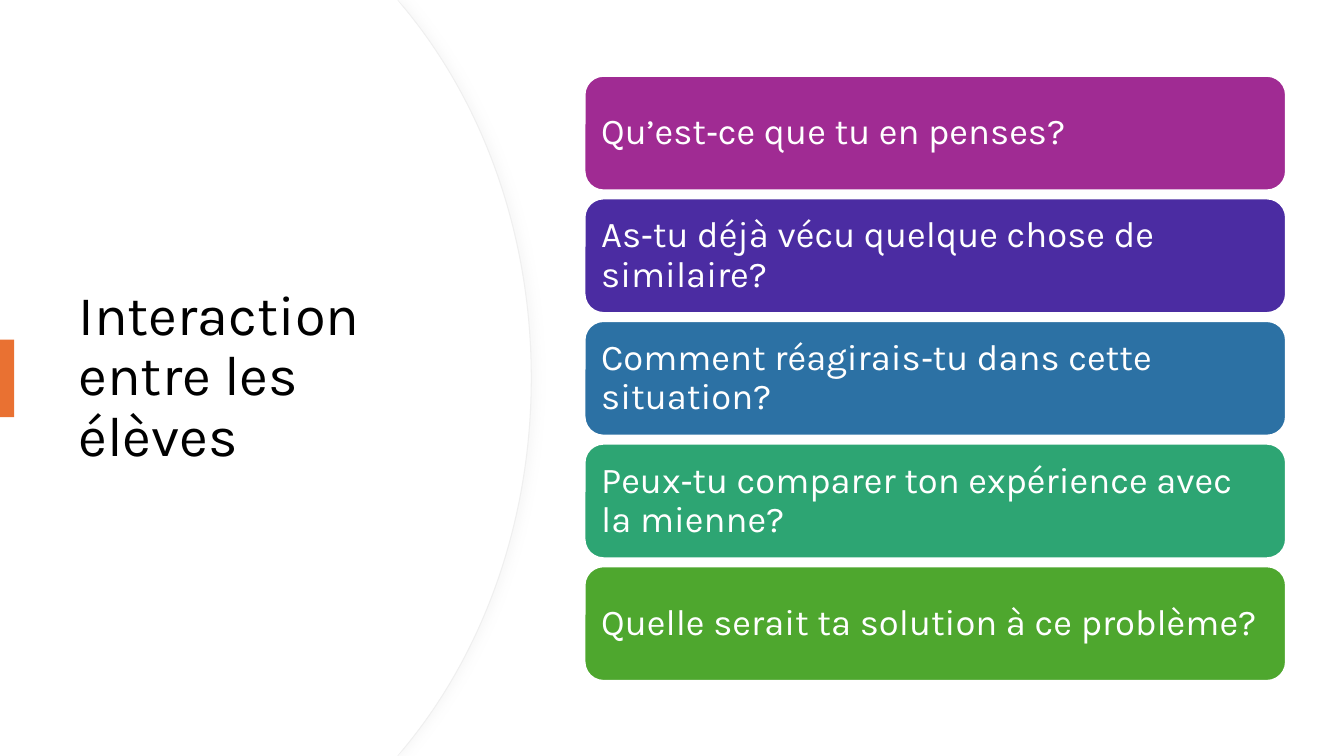
from dataclasses import dataclass

from lxml.etree import SubElement
from pptx import Presentation
from pptx.dml.color import RGBColor
from pptx.enum.shapes import MSO_SHAPE
from pptx.enum.text import MSO_ANCHOR, PP_ALIGN
from pptx.oxml.ns import qn
from pptx.util import Cm, Pt


@dataclass(frozen=True)
class Theme:
    font: str = "Karla"
    title_size: int = 40
    card_size: int = 26
    text: str = "000000"
    paper: str = "FFFFFF"
    outline: str = "EFEFEF"
    shadow: str = "D9D9D9"
    accent: str = "E97132"
    cards: tuple = ("A02B93", "4B2CA2", "2C71A4", "2DA573", "4EA72E")


THEME = Theme()
SLIDE_WIDTH, SLIDE_HEIGHT = 33.87, 19.05
QUESTIONS = (
    "Qu’est‑ce que tu en penses?",
    "As‑tu déjà vécu quelque chose de similaire?",
    "Comment réagirais‑tu dans cette situation?",
    "Peux‑tu comparer ton expérience avec la mienne?",
    "Quelle serait ta solution à ce problème?",
)
CARD_TOP, CARD_HEIGHT, CARD_PITCH = 1.91, 2.89, 3.09


def write_text(shape, text, *, size, color, inset_x=0.25, inset_y=0.13):
    frame = shape.text_frame
    frame.word_wrap = True
    frame.vertical_anchor = MSO_ANCHOR.MIDDLE
    frame.margin_left = frame.margin_right = Cm(inset_x)
    frame.margin_top = frame.margin_bottom = Cm(inset_y)
    paragraph = frame.paragraphs[0]
    paragraph.alignment = PP_ALIGN.LEFT
    paragraph.line_spacing = 0.9
    run = paragraph.add_run()
    run.text = text
    run.font.name = THEME.font
    run.font.size = Pt(size)
    run.font.color.rgb = RGBColor.from_string(color)


def paint(shape, fill, line=None, line_width=0.75):
    shape.shadow.inherit = False
    shape.fill.solid()
    shape.fill.fore_color.rgb = RGBColor.from_string(fill)
    if line is None:
        shape.line.fill.background()
    else:
        shape.line.color.rgb = RGBColor.from_string(line)
        shape.line.width = Pt(line_width)


def add_soft_shadow(shape, color):
    effects = shape._element.spPr.find(qn("a:effectLst"))
    shadow = SubElement(effects, qn("a:outerShdw"), blurRad=str(Pt(7)),
                        dist=str(Pt(3)), dir="0", algn="l", rotWithShape="0")
    tint = SubElement(shadow, qn("a:srgbClr"), val=color)
    SubElement(tint, qn("a:alpha"), val="20000")


def bend(shape, first_segment):
    """Turn three straight segments, from first_segment on, into one curve."""
    outline = shape._element.spPr.find(".//" + qn("a:path"))
    segments = outline.findall(qn("a:lnTo"))[first_segment:first_segment + 3]
    curve = outline.makeelement(qn("a:cubicBezTo"))
    segments[0].addprevious(curve)
    for segment in segments:
        curve.append(segment[0])
        outline.remove(segment)


def add_curved_panel(slide, reach):
    """Add a full-height panel whose right edge bulges out to reach (cm)."""
    upper = [(10.01, 0), (reach - 3.2, 0.2), (reach - 1.22, 2.59), (reach, 5.89)]
    lower = [(x, SLIDE_HEIGHT - y) for x, y in reversed(upper)]
    points = upper + [(reach, SLIDE_HEIGHT / 2)] + lower + [(0, SLIDE_HEIGHT)]
    builder = slide.shapes.build_freeform(0, 0)
    builder.add_line_segments([(Cm(x), Cm(y)) for x, y in points], close=True)
    panel = builder.convert_to_shape()
    for _ in ("upper half", "lower half"):
        bend(panel, 2)
    return panel


def add_block(slide, kind, left, top, width, height):
    return slide.shapes.add_shape(kind, Cm(left), Cm(top), Cm(width), Cm(height))


def add_question_card(slide, index, question, color):
    card = add_block(slide, MSO_SHAPE.ROUNDED_RECTANGLE, 14.73,
                     CARD_TOP + index * CARD_PITCH, 17.68, CARD_HEIGHT)
    paint(card, color, THEME.paper, 1.5)
    write_text(card, question, size=THEME.card_size, color=THEME.paper,
               inset_x=0.28, inset_y=0.28)


def main():
    presentation = Presentation()
    presentation.slide_width = Cm(SLIDE_WIDTH)
    presentation.slide_height = Cm(SLIDE_HEIGHT)
    slide = presentation.slides.add_slide(presentation.slide_layouts[6])

    edge_panel = add_curved_panel(slide, 13.39)
    paint(edge_panel, THEME.paper, THEME.outline)
    add_soft_shadow(edge_panel, THEME.shadow)
    paint(add_curved_panel(slide, 13.36), THEME.paper)

    title = slide.shapes.add_textbox(Cm(1.73), Cm(3.23), Cm(10), Cm(12.57))
    write_text(title, "Interaction entre les élèves",
               size=THEME.title_size, color=THEME.text)
    paint(add_block(slide, MSO_SHAPE.RECTANGLE, 0, 8.56, 0.36, 1.95), THEME.accent)

    for index, (question, color) in enumerate(zip(QUESTIONS, THEME.cards)):
        add_question_card(slide, index, question, color)

    presentation.save("out.pptx")


if __name__ == "__main__":
    main()
